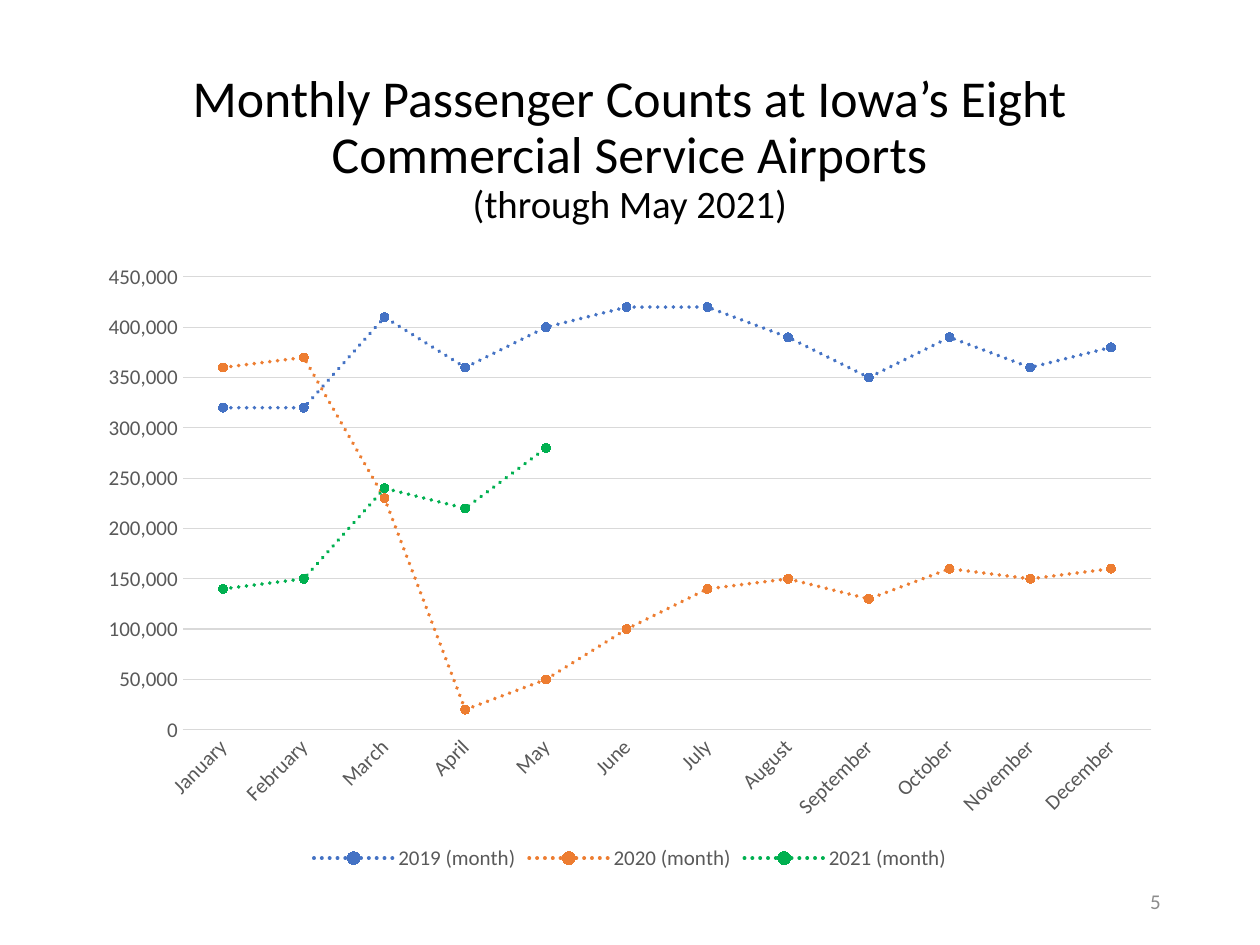
from pptx import Presentation
from pptx.chart.data import CategoryChartData
from pptx.dml.color import RGBColor
from pptx.enum.chart import XL_CHART_TYPE, XL_LEGEND_POSITION, XL_MARKER_STYLE, XL_TICK_MARK
from pptx.enum.dml import MSO_LINE
from pptx.enum.text import MSO_ANCHOR, MSO_AUTO_SIZE, PP_ALIGN
from pptx.oxml.ns import qn
from pptx.util import Inches, Pt

BLACK = RGBColor(0x00, 0x00, 0x00)
GRAY = RGBColor(0x59, 0x59, 0x59)
PALE = RGBColor(0xD9, 0xD9, 0xD9)
SILVER = RGBColor(0x8C, 0x8C, 0x8C)
BLUE = RGBColor(0x44, 0x72, 0xC4)
ORANGE = RGBColor(0xED, 0x7D, 0x31)
GREEN = RGBColor(0x00, 0xB0, 0x50)

FONT = "Calibri"
LEFT, WIDTH = Inches(0.69), Inches(8.62)
MONTHS = ["January", "February", "March", "April", "May", "June", "July",
          "August", "September", "October", "November", "December"]
# Passengers in ten thousands, by year
COUNTS = [
    ("2019 (month)", BLUE, [32, 32, 41, 36, 40, 42, 42, 39, 35, 39, 36, 38]),
    ("2020 (month)", ORANGE, [36, 37, 23, 2, 5, 10, 14, 15, 13, 16, 15, 16]),
    ("2021 (month)", GREEN, [14, 15, 24, 22, 28] + [None] * 7),
]


def set_font(font, size, color):
    font.name = FONT
    font.size = Pt(size)
    font.bold = False
    font.color.rgb = color


def add_run(para, text, size, color):
    run = para.add_run()
    run.text = text
    set_font(run.font, size, color)


def fill_title(title):
    title.left, title.top = LEFT, Inches(0.4)
    title.width, title.height = WIDTH, Inches(1.45)
    frame = title.text_frame
    frame.auto_size = MSO_AUTO_SIZE.NONE
    frame.word_wrap = True
    frame.vertical_anchor = MSO_ANCHOR.BOTTOM
    lines = [("Monthly Passenger Counts at Iowa’s Eight Commercial Service Airports", 29.6),
             ("(through May 2021)", 22.2)]
    for i, (text, size) in enumerate(lines):
        para = frame.add_paragraph() if i else frame.paragraphs[0]
        para.alignment = PP_ALIGN.CENTER
        para.line_spacing = 0.9
        para.space_before = Pt(0)
        add_run(para, text, size, BLACK)


def style_line(line, color, width):
    line.color.rgb = color
    line.width = Pt(width)


def style_axes(chart):
    months, counts = chart.category_axis, chart.value_axis
    for axis in (months, counts):
        axis.major_tick_mark = axis.minor_tick_mark = XL_TICK_MARK.NONE
        set_font(axis.tick_labels.font, 12, GRAY)
    style_line(months.format.line, PALE, 0.75)
    months._element.txPr.bodyPr.set("rot", "-2700000")
    counts.minimum_scale, counts.maximum_scale = 0, 450000
    counts.major_unit = 50000
    counts.format.line.fill.background()
    counts.tick_labels.number_format = "#,##0"
    counts.tick_labels.number_format_is_linked = False
    counts.has_major_gridlines = True
    style_line(counts.major_gridlines.format.line, PALE, 0.75)


def style_series(series, color):
    """Draw a line of round dots with filled circles as markers."""
    series.smooth = False
    style_line(series.format.line, color, 2.25)
    series.format.line.dash_style = MSO_LINE.ROUND_DOT
    series._element.spPr.find(qn("a:ln")).set("cap", "rnd")
    marker = series.marker
    marker.style = XL_MARKER_STYLE.CIRCLE
    marker.size = 5
    marker.format.fill.solid()
    marker.format.fill.fore_color.rgb = color
    style_line(marker.format.line, color, 0.75)


def add_counts(slide):
    data = CategoryChartData(number_format="#,##0")
    data.categories = MONTHS
    for name, _, values in COUNTS:
        data.add_series(name, [v and v * 10000 for v in values])
    chart = slide.shapes.add_chart(XL_CHART_TYPE.LINE_MARKERS, LEFT, Inches(2),
                                   WIDTH, Inches(4.95), data).chart
    set_font(chart.font, 10, BLACK)
    chart.has_title = False
    chart.plots[0].vary_by_categories = False
    style_axes(chart)
    for series, (_, color, _) in zip(chart.plots[0].series, COUNTS):
        style_series(series, color)
    chart.has_legend = True
    chart.legend.position = XL_LEGEND_POSITION.BOTTOM
    chart.legend.include_in_layout = False
    set_font(chart.legend.font, 12, GRAY)


def add_number(slide):
    box = slide.shapes.add_textbox(Inches(7.06), Inches(6.95), Inches(2.25), Inches(0.4))
    frame = box.text_frame
    frame.word_wrap = True
    frame.vertical_anchor = MSO_ANCHOR.MIDDLE
    frame.paragraphs[0].alignment = PP_ALIGN.RIGHT
    add_run(frame.paragraphs[0], "5", 12, SILVER)


def main():
    deck = Presentation()
    deck.slide_width, deck.slide_height = Inches(10), Inches(7.5)
    slide = deck.slides.add_slide(deck.slide_layouts[5])
    add_counts(slide)
    add_number(slide)
    fill_title(slide.shapes.title)
    deck.save("out.pptx")


if __name__ == "__main__":
    main()
